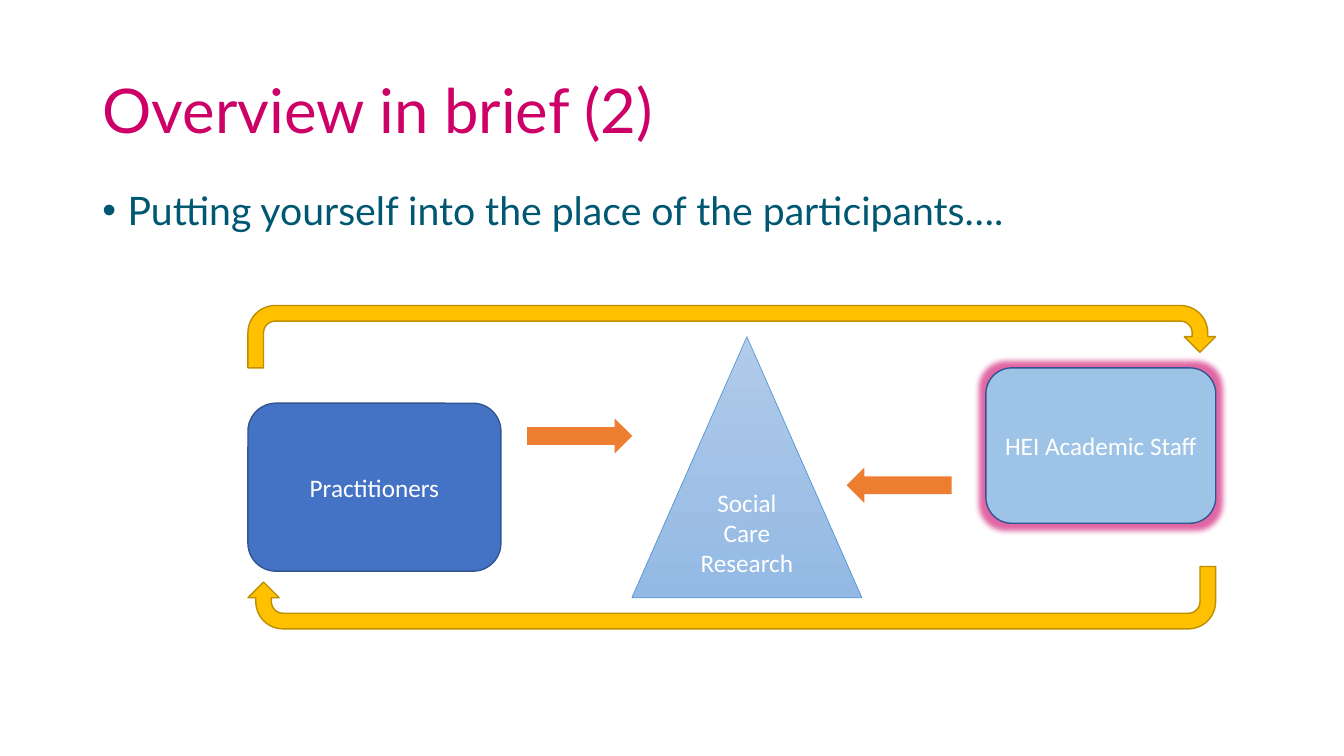
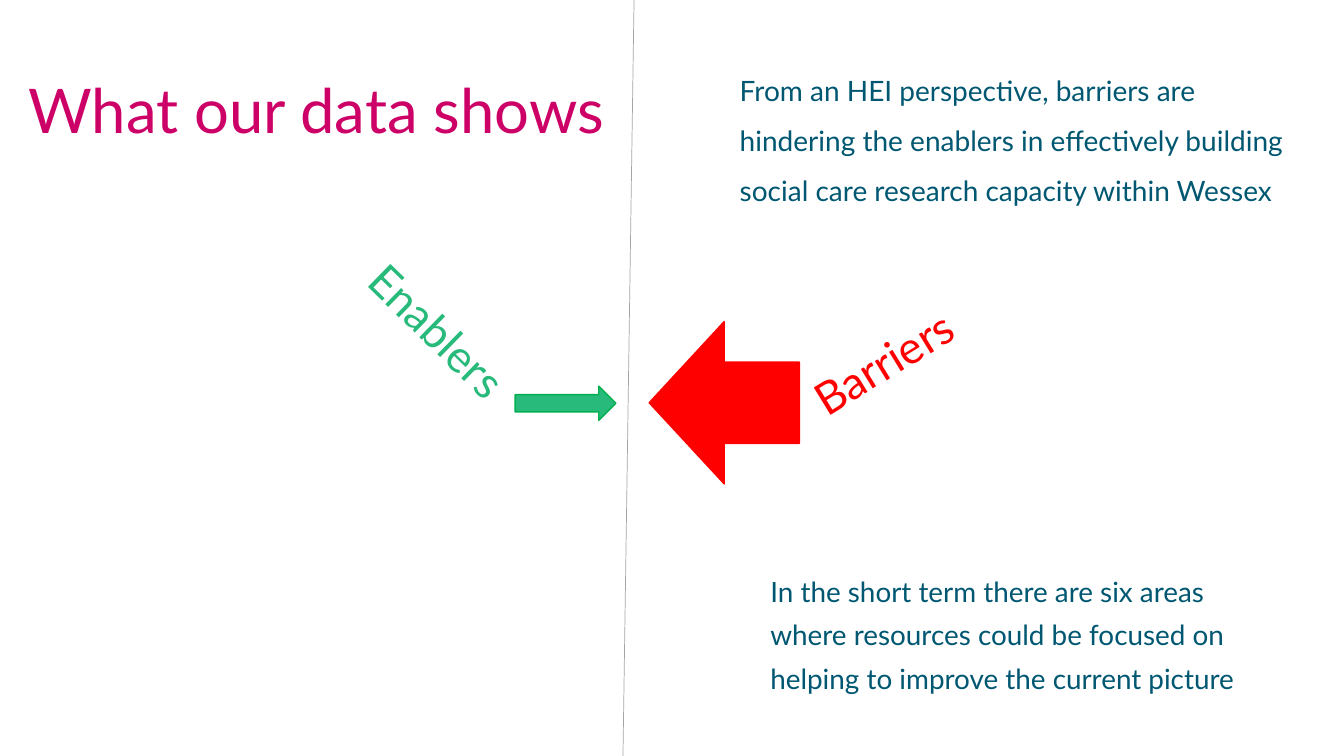
from dataclasses import dataclass

from lxml.etree import SubElement
from pptx import Presentation
from pptx.dml.color import RGBColor
from pptx.enum.shapes import MSO_CONNECTOR, MSO_SHAPE
from pptx.enum.text import MSO_ANCHOR, MSO_AUTO_SIZE, PP_ALIGN
from pptx.oxml.ns import qn
from pptx.shapes.autoshape import Shape
from pptx.slide import Slide
from pptx.text.text import TextFrame
from pptx.util import Pt

COLOURS = {
    "title": "CC0066",
    "body": "005772",
    "white": "FFFFFF",
    "practitioners": "4472C4",
    "academics": "9DC3E6",
    "box_edge": "325491",
    "research_top": "B1CBE9",
    "research_bottom": "93B9E4",
    "research_edge": "5B9BD5",
    "inward": "ED7D31",
    "cycle": "FFC000",
    "cycle_edge": "BD8E00",
    "enablers": "28BA7B",
    "enablers_edge": "00B050",
    "barriers": "FF0000",
    "divider": "A5A5A5",
}
HEADING_FONT = "Lato"
DIAGRAM_FONT = "Calibri"


@dataclass(frozen=True)
class Box:
    left: float
    top: float
    width: float
    height: float
    rotation: float = 0


@dataclass(frozen=True)
class Figure:
    kind: MSO_SHAPE
    box: Box
    fill: str
    edge: str = ""
    edge_width: float = 1
    text: str = ""
    fill_end: str = ""
    glow: str = ""


@dataclass(frozen=True)
class Label:
    text: str
    box: Box
    colour: str


CYCLE_LEFT, CYCLE_WIDTH, CYCLE_HEIGHT = 177.1, 691.2, 44.6

OVERVIEW_FIGURES = (
    Figure(MSO_SHAPE.ROUNDED_RECTANGLE, Box(CYCLE_LEFT, 288, 180.7, 120),
           "practitioners", "box_edge", text="Practitioners"),
    Figure(MSO_SHAPE.ROUNDED_RECTANGLE, Box(704.2, 262.8, 164.2, 111),
           "academics", "box_edge", text="HEI Academic Staff", glow="title"),
    Figure(MSO_SHAPE.ISOSCELES_TRIANGLE, Box(451.4, 240.5, 164.2, 186.5),
           "research_top", "research_edge", 0.5, "Social\nCare\nResearch",
           fill_end="research_bottom"),
    Figure(MSO_SHAPE.RIGHT_ARROW, Box(376.6, 298.8, 75, 25.2), "inward"),
    Figure(MSO_SHAPE.LEFT_ARROW, Box(604.8, 334, 75, 25.2), "inward"),
    Figure(MSO_SHAPE.U_TURN_ARROW,
           Box(CYCLE_LEFT, 218.2, CYCLE_WIDTH, CYCLE_HEIGHT),
           "cycle", "cycle_edge"),
    Figure(MSO_SHAPE.U_TURN_ARROW,
           Box(CYCLE_LEFT, 404.6, CYCLE_WIDTH, CYCLE_HEIGHT, 180),
           "cycle", "cycle_edge"),
)
FORCE_FIGURES = (
    Figure(MSO_SHAPE.RIGHT_ARROW, Box(368, 275.8, 72, 24.5),
           "enablers", "enablers_edge"),
    Figure(MSO_SHAPE.LEFT_ARROW, Box(463.7, 229.7, 107.3, 116),
           "barriers", "barriers"),
)
FORCE_LABELS = (
    Label("Barriers", Box(563.8, 200.2, 214.6, 73.4, 328.5), "barriers"),
    Label("Enablers", Box(237.6, 201.6, 180, 104.4, 44.3), "enablers"),
)


def rgb(name: str) -> RGBColor:
    return RGBColor.from_string(COLOURS[name])


def write(frame: TextFrame, text: str, *, size: float, colour: str,
          font: str = HEADING_FONT, align: PP_ALIGN = PP_ALIGN.LEFT,
          anchor: MSO_ANCHOR = MSO_ANCHOR.TOP, spacing: float = 1,
          after: float = 0, margin: float = 0, indent: float = 0,
          bullet: str = "") -> None:
    frame.text = text
    frame.word_wrap = True
    frame.auto_size = MSO_AUTO_SIZE.NONE
    frame.vertical_anchor = anchor
    for paragraph in frame.paragraphs:
        paragraph.alignment = align
        paragraph.line_spacing = spacing
        paragraph.space_before = Pt(0)
        paragraph.space_after = Pt(after)
        properties = paragraph._p.get_or_add_pPr()
        properties.set("marL", str(Pt(margin)))
        properties.set("indent", str(Pt(indent)))
        if bullet:
            SubElement(properties, qn("a:buFont")).set("typeface", "Arial")
            SubElement(properties, qn("a:buChar")).set("char", bullet)
        else:
            SubElement(properties, qn("a:buNone"))
        for run in paragraph.runs:
            run.font.name = font
            run.font.size = Pt(size)
            run.font.color.rgb = rgb(colour)


def place(shape: Shape, box: Box) -> None:
    shape.left, shape.top = Pt(box.left), Pt(box.top)
    shape.width, shape.height = Pt(box.width), Pt(box.height)
    shape.rotation = box.rotation


def add_text_area(slide: Slide, box: Box) -> TextFrame:
    area = slide.shapes.add_textbox(Pt(0), Pt(0), Pt(0), Pt(0))
    place(area, box)
    return area.text_frame


def add_figure(slide: Slide, figure: Figure) -> Shape:
    shape = slide.shapes.add_shape(figure.kind, Pt(0), Pt(0), Pt(0), Pt(0))
    place(shape, figure.box)
    shape.shadow.inherit = False
    if figure.fill_end:
        shape.fill.gradient()
        shape.fill.gradient_angle = 270
        for stop, name in zip(shape.fill.gradient_stops,
                              (figure.fill, figure.fill_end)):
            stop.color.rgb = rgb(name)
    else:
        shape.fill.solid()
        shape.fill.fore_color.rgb = rgb(figure.fill)
    if figure.edge:
        shape.line.color.rgb = rgb(figure.edge)
        shape.line.width = Pt(figure.edge_width)
    else:
        shape.line.fill.background()
    if figure.glow:
        add_glow(shape, figure.glow)
    if figure.text:
        write(shape.text_frame, figure.text, size=18, colour="white",
              font=DIAGRAM_FONT, align=PP_ALIGN.CENTER,
              anchor=MSO_ANCHOR.MIDDLE)
    return shape


def add_glow(shape: Shape, colour: str) -> None:
    effects = shape._element.spPr.find(qn("a:effectLst"))
    glow = SubElement(effects, qn("a:glow"), rad=str(Pt(8)))
    tint = SubElement(glow, qn("a:srgbClr"), val=COLOURS[colour])
    SubElement(tint, qn("a:alpha"), val="60000")


def add_divider(slide: Slide) -> None:
    divider = slide.shapes.add_connector(
        MSO_CONNECTOR.STRAIGHT, Pt(452.9), Pt(0), Pt(445), Pt(540))
    divider.line.color.rgb = rgb("divider")
    divider.line.width = Pt(0.5)
    SubElement(divider._element.spPr, qn("a:effectLst"))


def add_titled_slide(deck: Presentation, title: str, left: float,
                     body_box: Box) -> tuple[Slide, TextFrame]:
    slide = deck.slides.add_slide(deck.slide_layouts[1])
    place(slide.shapes.title, Box(left, 28.8, 828, 104.4))
    write(slide.shapes.title.text_frame, title, size=44, colour="title",
          anchor=MSO_ANCHOR.MIDDLE, spacing=0.9)
    body = slide.placeholders[1]
    place(body, body_box)
    return slide, body.text_frame


def build_overview(deck: Presentation) -> None:
    slide, body = add_titled_slide(deck, "Overview in brief (2)", 66,
                                   Box(66, 133.2, 828, 283))
    write(body, "Putting yourself into the place of the participants….",
          size=28, colour="body", spacing=0.9, after=12,
          margin=18, indent=-18, bullet="•")
    for figure in OVERVIEW_FIGURES:
        add_figure(slide, figure)


def build_findings(deck: Presentation) -> None:
    slide, body = add_titled_slide(deck, "What our data shows", 13,
                                   Box(507, 399.6, 412.6, 123.8))
    write(body, "In the short term there are six areas where resources could "
          "be focused on helping to improve the current picture",
          size=19.9, colour="body", spacing=1.3, after=12, margin=36)
    add_divider(slide)
    for label in FORCE_LABELS:
        write(add_text_area(slide, label.box), label.text, size=32,
              colour=label.colour, anchor=MSO_ANCHOR.MIDDLE, spacing=0.9)
    for figure in FORCE_FIGURES:
        add_figure(slide, figure)
    write(add_text_area(slide, Box(485.3, 36.7, 442, 104.4)),
          "From an HEI perspective, barriers are hindering the enablers in "
          "effectively building social care research capacity within Wessex",
          size=20, colour="body", spacing=1.5, after=12, margin=36)


def main() -> None:
    deck = Presentation()
    deck.slide_width, deck.slide_height = Pt(960), Pt(540)
    build_overview(deck)
    build_findings(deck)
    deck.save("out.pptx")


if __name__ == "__main__":
    main()
